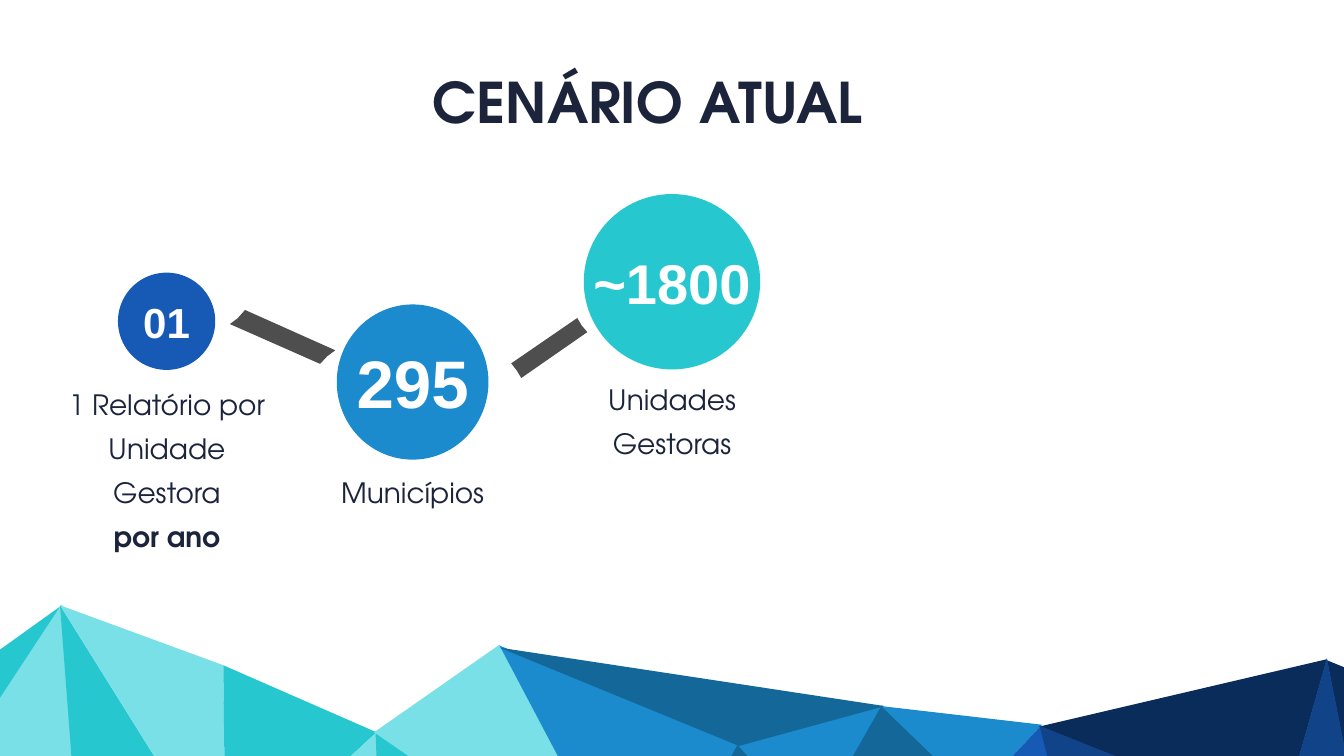
from pptx import Presentation
from pptx.dml.color import RGBColor
from pptx.enum import shapes, text
from pptx.util import Inches, Pt

COLORS = {
    "ink": "1B243B", "white": "FFFFFF", "link": "4E4E4E",
    "aqua": "78E0E6", "teal": "27C7CF", "sky": "1B8BCD", "petrol": "146899",
    "royal": "165AB6", "cobalt": "104388", "navy": "0A2C5B",
}
HEADING_FONT = "TeX Gyre Adventor"


def paint(shape, color):
    shape.shadow.inherit = False
    shape.fill.solid()
    shape.fill.fore_color.rgb = RGBColor.from_string(COLORS[color])
    shape.line.fill.background()


def write(frame, lines, size, color, font, spacing=None):
    frame.text = "\n".join(line for line, bold in lines)
    for paragraph, (line, bold) in zip(frame.paragraphs, lines):
        paragraph.alignment = text.PP_ALIGN.CENTER
        paragraph.line_spacing = spacing
        style = paragraph.runs[0].font
        style.name, style.size, style.bold = font, Pt(size), bold
        style.color.rgb = RGBColor.from_string(COLORS[color])


prs = Presentation()
prs.slide_width, prs.slide_height = Inches(26.66), Inches(15)
slide = prs.slides.add_slide(prs.slide_layouts[6])

facets = [
    ("teal", [(1.24, 12), (0, 12.89), (0, 13.88)]),
    ("aqua", [(1.57, 16.64), (1.21, 12.01), (-0.02, 13.88), (-0.02, 16.64)]),
    ("teal", [(4.08, 16.64), (1.19, 12.01), (1.54, 16.64)]),
    ("aqua", [(4.47, 16.64), (4.43, 13.2), (1.19, 12.01), (4.08, 16.64)]),
    ("teal", [(5.18, 16.64), (7.47, 14.53), (4.43, 13.2), (4.47, 16.64)]),
    ("aqua", [(7.55, 16.64), (7.47, 14.53), (5.18, 16.64)]),
    ("teal", [(10.52, 16.64), (7.45, 14.53), (7.53, 16.64)]),
    ("aqua", [(11.94, 16.64), (9.91, 12.79), (7.42, 14.53), (10.49, 16.64)]),
    ("sky", [(13.62, 16.66), (14.66, 14.76), (9.91, 12.81), (11.94, 16.66)]),
    ("sky", [(14.61, 14.79), (16.1, 16.47), (17.51, 14)]),
    ("petrol", [(16.08, 16.47), (19.35, 15.8), (17.49, 14)]),
    ("sky", [(17.48, 14.01), (19.34, 15.8), (20.67, 14.38)]),
    ("royal", [(21.24, 16.71), (20.65, 14.4), (19.31, 15.83), (20.28, 16.71)]),
    ("navy", [(20.6, 14.42), (25.4, 16.33), (26.32, 13.08)]),
    ("cobalt", [(24.41, 16.71), (25.42, 16.31), (20.62, 14.4), (21.21, 16.71)]),
    ("navy", [(26.81, 13.3), (26.32, 13.1), (26.81, 15.57)]),
    ("cobalt", [(26.81, 16.71), (26.81, 15.52), (26.32, 13.06), (25.4, 16.31), (26, 16.71)]),
    ("petrol", [(9.91, 12.85), (17.55, 14.01), (14.66, 14.8)]),
    ("petrol", [(15.71, 16.68), (16.12, 16.46), (14.63, 14.78), (13.59, 16.68)]),
]
links = [
    ("link", [(6.65, 6.95), (4.86, 6.15), (4.72, 6.31), (4.56, 6.43), (6.35, 7.22), (6.49, 7.07)]),
    ("link", [(11.45, 6.31), (10.14, 7.21), (10.25, 7.35), (10.34, 7.5), (11.65, 6.59), (11.54, 6.46)]),
]
for color, corners in facets + links:
    points = [(Inches(x), Inches(y)) for x, y in corners]
    outline = slide.shapes.build_freeform(*points[0])
    outline.add_line_segments(points[1:], close=True)
    paint(outline.convert_to_shape(), color)

circles = [
    ("01", 60, "royal", (2.34, 5.41, 1.93, 1.93)),
    ("295", 96, "sky", (6.68, 6.04, 3.01, 3.08)),
    ("~1800", 80, "teal", (11.58, 3.85, 3.5, 3.48)),
]
for number, size, color, box in circles:
    circle = slide.shapes.add_shape(shapes.MSO_SHAPE.OVAL, *map(Inches, box))
    paint(circle, color)
    circle.text_frame.word_wrap = False
    circle.text_frame.vertical_anchor = text.MSO_ANCHOR.MIDDLE
    write(circle.text_frame, [(number, True)], size, "white", "Arial")

captions = [
    ([("CENÁRIO ATUAL", True)], 80, None, (1.76, 1.29, 22.17, 1.45)),
    ([("Unidades Gestoras", False)], 40, 1.31, (11.06, 7.34, 4.54, 2.46)),
    ([("Municípios", False)], 40, 1.31, (6.28, 9.18, 3.81, 1.75)),
    ([("1 Relatório por Unidade Gestora", False), ("por ano", True)], 40, 1.31, (1.1, 7.43, 4.42, 2.65)),
]
for lines, size, spacing, box in captions:
    caption = slide.shapes.add_textbox(*map(Inches, box))
    caption.text_frame.word_wrap = True
    write(caption.text_frame, lines, size, "ink", HEADING_FONT, spacing)

prs.save("out.pptx")
